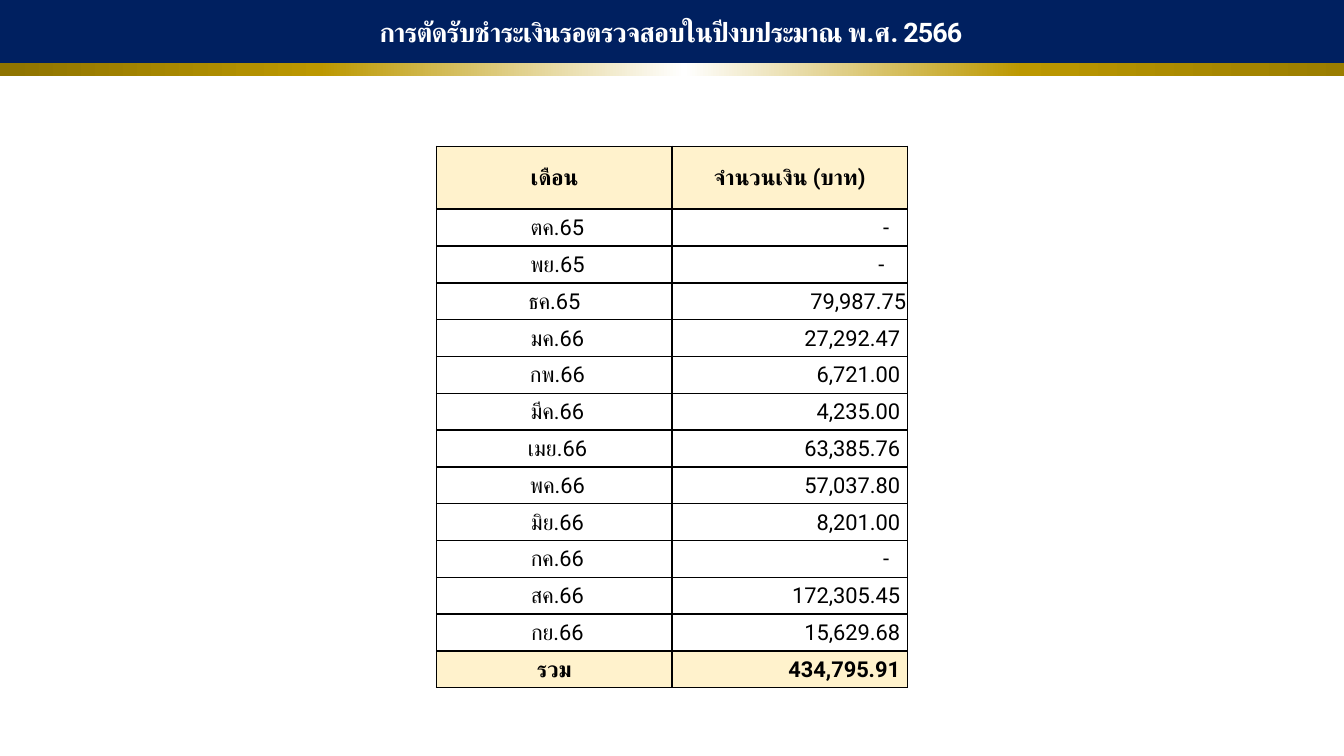
from lxml.etree import SubElement as Sub
from pptx import Presentation
from pptx.dml.color import RGBColor as RGB
from pptx.enum.shapes import MSO_SHAPE as Shape
from pptx.enum.text import MSO_ANCHOR as Anchor, MSO_AUTO_SIZE as Auto, PP_ALIGN as Align
from pptx.oxml.ns import qn
from pptx.util import Inches, Pt

HUES = {"navy": "002060", "white": "FFFFFF", "black": "000000", "cream": "FFF2CC",
        "dark": "8E7300", "gold": "BC9800", "end": "9A7D00"}
SHINE = [(0, "dark"), (24, "gold"), (51, "white"), (76, "gold"), (100, "end")]
TITLE = "การตัดรับชำระเงินรอตรวจสอบในปีงบประมาณ พ.ศ. 2566"
HEAD = ("เดือน", "จำนวนเงิน (บาท)")
# month, amount, right inset
MONTHS = [
    ("ตค.65", "-", 0.15),
    ("พย.65", "-", 0.19),
    ("ธค.65", "79,987.75", 0.01),
    ("มค.66", "27,292.47", 0.06),
    ("กพ.66", "6,721.00", 0.06),
    ("มีค.66", "4,235.00", 0.06),
    ("เมย.66", "63,385.76", 0.06),
    ("พค.66", "57,037.80", 0.06),
    ("มิย.66", "8,201.00", 0.06),
    ("กค.66", "-", 0.15),
    ("สค.66", "172,305.45", 0.06),
    ("กย.66", "15,629.68", 0.06),
]
TOTAL = ("รวม", "434,795.91")


def color(name):
    return RGB.from_string(HUES[name])


def write(frame, text, size=13, hue="black", bold=False, align=Align.CENTER, track=0):
    """Put one formatted run in the frame; track is letter spacing in points."""
    para = frame.paragraphs[0]
    para.alignment = align
    run = para.add_run()
    run.text = text
    font = run.font
    font.size, font.bold, font.name = Pt(size), bold, "Roboto"
    font.color.rgb = color(hue)
    props = run._r.get_or_add_rPr()
    Sub(props, qn("a:cs"), typeface="Roboto")
    if track:
        props.set("spc", str(int(track * 100)))


class Deck:
    def __init__(self, wide, high):
        self.file = Presentation()
        self.file.slide_width, self.file.slide_height = Inches(wide), Inches(high)
        self.slide = self.file.slides.add_slide(self.file.slide_layouts[5])

    def title(self, text, left, top, wide, high):
        box = self.slide.shapes.title
        box.left, box.top = Inches(left), Inches(top)
        box.width, box.height = Inches(wide), Inches(high)
        box.fill.solid()
        box.fill.fore_color.rgb = color("navy")
        frame = box.text_frame
        frame.word_wrap, frame.auto_size = True, Auto.NONE
        frame.vertical_anchor = Anchor.MIDDLE
        write(frame, text, size=16, hue="white", bold=True, track=-0.5)

    def band(self, stops, left, top, wide, high):
        """Add a gradient bar behind the title."""
        bar = self.slide.shapes.add_shape(
            Shape.RECTANGLE, Inches(left), Inches(top), Inches(wide), Inches(high))
        bar.shadow.inherit = False
        bar.line.fill.background()
        bar.fill.gradient()
        bar.fill.gradient_angle = 0
        ramp = bar.element.spPr.find(qn("a:gradFill")).find(qn("a:gsLst"))
        for old in list(ramp):
            ramp.remove(old)
        for at, hue in stops:
            stop = Sub(ramp, qn("a:gs"), pos=str(at * 1000))
            Sub(stop, qn("a:srgbClr"), val=HUES[hue])
        self.slide.shapes.title.element.addprevious(bar.element)

    def cell(self, cell, text, fill="white", left=0.01, right=0.01, **style):
        props = cell._tc.get_or_add_tcPr()
        for side in "LRTB":
            line = Sub(props, qn(f"a:ln{side}"), w=str(Pt(1)))
            Sub(Sub(line, qn("a:solidFill")), qn("a:srgbClr"), val=HUES["black"])
        cell.fill.solid()
        cell.fill.fore_color.rgb = color(fill)
        cell.margin_left, cell.margin_right = Inches(left), Inches(right)
        cell.margin_top, cell.margin_bottom = Inches(0.01), 0
        cell.vertical_anchor = Anchor.MIDDLE
        write(cell.text_frame, text, **style)

    def table(self, left, top, wide, high, first):
        """Add the month table; first is the height of its heading row."""
        count = len(MONTHS) + 2
        grid = self.slide.shapes.add_table(
            count, 2, Inches(left), Inches(top), Inches(wide), Inches(high)).table
        grid.first_row = grid.horz_banding = False
        for col in grid.columns:
            col.width = Inches(wide / 2)
        for num, row in enumerate(grid.rows):
            row.height = Inches((high - first) / (count - 1) if num else first)

        mark = {"fill": "cream", "bold": True}
        for col, text in enumerate(HEAD):
            self.cell(grid.cell(0, col), text, **mark)
        for row, (month, sum_, inset) in enumerate(MONTHS, 1):
            self.cell(grid.cell(row, 0), month, left=0.01 if month == "ธค.65" else 0.06)
            self.cell(grid.cell(row, 1), sum_, right=inset, align=Align.RIGHT)
        self.cell(grid.cell(count - 1, 0), TOTAL[0], **mark)
        self.cell(grid.cell(count - 1, 1), TOTAL[1], right=0.06, align=Align.RIGHT, **mark)


def main():
    deck = Deck(11.11, 6.25)
    deck.title(TITLE, -0.03, 0, 11.15, 0.52)
    deck.band(SHINE, -0.03, 0, 11.15, 0.63)
    deck.table(3.61, 1.21, 3.89, 4.48, first=0.52)
    deck.file.save("out.pptx")


if __name__ == "__main__":
    main()
